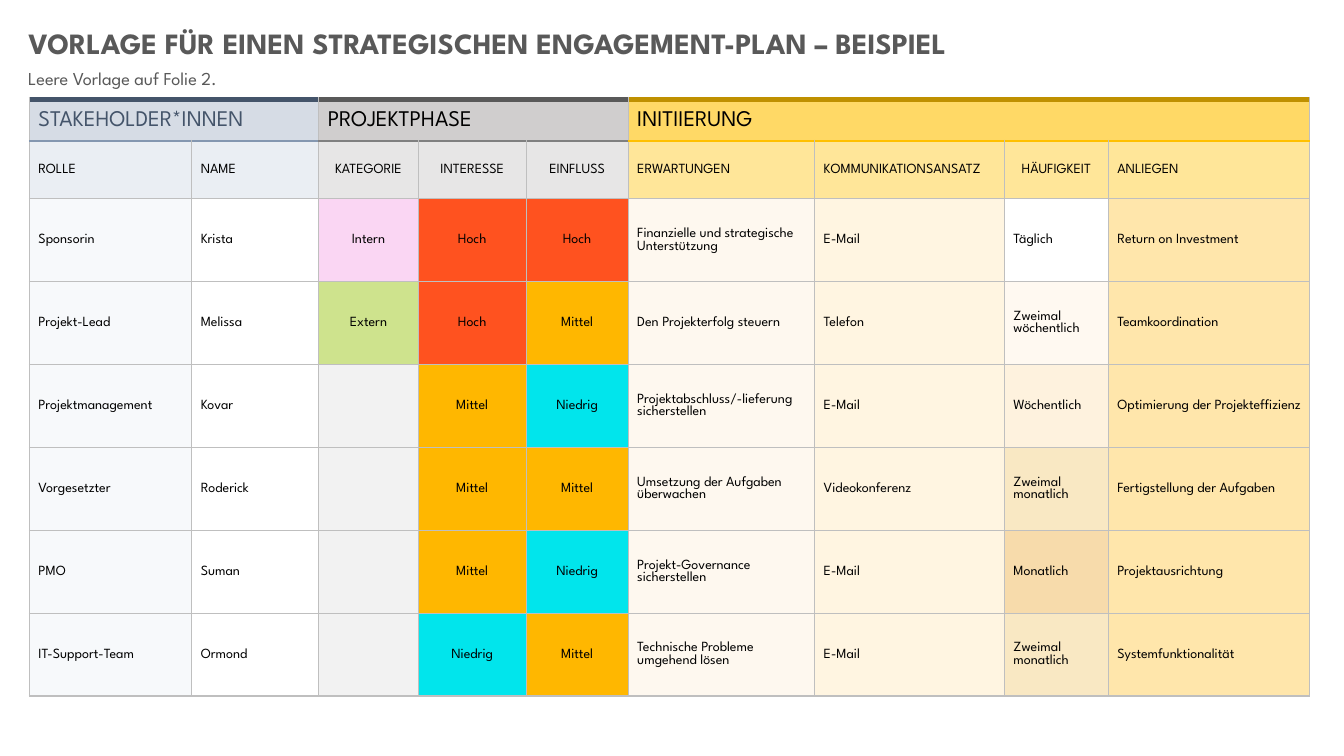
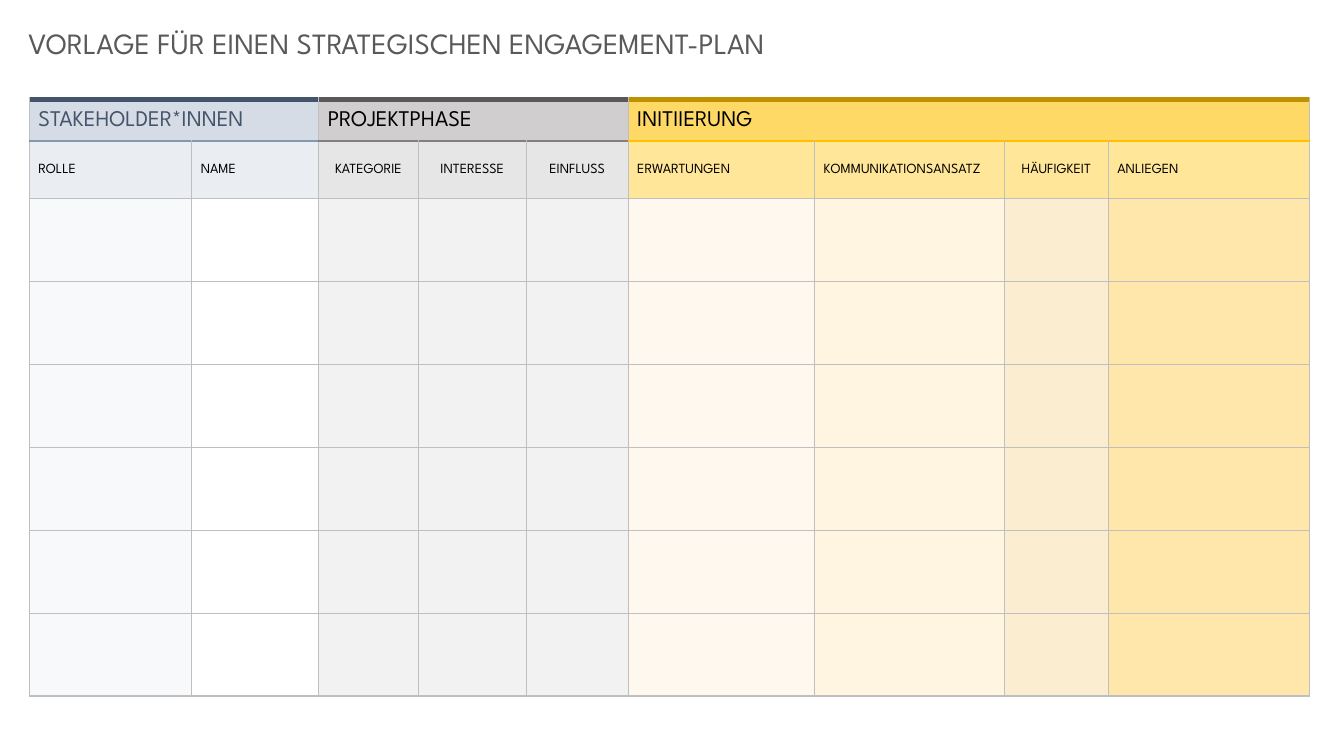
import lxml.etree
import pptx
import pptx.dml.color
import pptx.enum.text
import pptx.oxml.ns
import pptx.util

FONT = "League Spartan"
GREY_TEXT = "595959"
BLACK = "000000"
GRID = ("BFBFBF", 1)
LEFT = pptx.enum.text.PP_ALIGN.LEFT
CENTER = pptx.enum.text.PP_ALIGN.CENTER
TOP = pptx.enum.text.MSO_ANCHOR.TOP
MIDDLE = pptx.enum.text.MSO_ANCHOR.MIDDLE

PHASES = [
    dict(name="STAKEHOLDER*INNEN", span=2, text="44546A", fill="D6DCE5",
         top="44546A", bottom="8497B0", subfill="EAEEF3"),
    dict(name="PROJEKTPHASE", span=3, text=BLACK, fill="D0CECE",
         top="595959", bottom="808080", subfill="E7E6E6"),
    dict(name="INITIIERUNG", span=4, text=BLACK, fill="FFD966",
         top="BF9000", bottom="FFC000", subfill="FFE699"),
]

# name, width in cm, fill, heading alignment, body alignment
COLUMNS = [
    ("ROLLE", 4.09, "F7F9FB", LEFT, LEFT),
    ("NAME", 3.2, "FFFFFF", LEFT, LEFT),
    ("KATEGORIE", 2.51, "F2F2F2", CENTER, CENTER),
    ("INTERESSE", 2.72, "F2F2F2", CENTER, CENTER),
    ("EINFLUSS", 2.57, "F2F2F2", CENTER, CENTER),
    ("ERWARTUNGEN", 4.7, "FEF8EF", LEFT, LEFT),
    ("KOMMUNIKATIONSANSATZ", 4.78, "FFF5E1", LEFT, LEFT),
    ("HÄUFIGKEIT", 2.62, "FBEDCF", CENTER, LEFT),
    ("ANLIEGEN", 5.08, "FFE6AB", LEFT, LEFT),
]

VALUE_FILLS = {
    "Intern": "FAD6F3",
    "Extern": "CEE38D",
    "Hoch": "FF521F",
    "Mittel": "FFB700",
    "Niedrig": "01E5EC",
    "Täglich": "FFFFFF",
    "Zweimal wöchentlich": "FFF9F1",
    "Wöchentlich": "FEF2DE",
    "Zweimal monatlich": "F9E8C3",
    "Monatlich": "F7DBAB",
}

EXAMPLE = [
    ("Sponsorin", "Krista", "Intern", "Hoch", "Hoch",
     "Finanzielle und strategische Unterstützung", "E-Mail", "Täglich",
     "Return on Investment"),
    ("Projekt-Lead", "Melissa", "Extern", "Hoch", "Mittel",
     "Den Projekterfolg steuern", "Telefon", "Zweimal wöchentlich",
     "Teamkoordination"),
    ("Projektmanagement", "Kovar", "", "Mittel", "Niedrig",
     "Projektabschluss/-lieferung sicherstellen", "E-Mail", "Wöchentlich",
     "Optimierung der Projekteffizienz"),
    ("Vorgesetzter", "Roderick", "", "Mittel", "Mittel",
     "Umsetzung der Aufgaben überwachen", "Videokonferenz", "Zweimal monatlich",
     "Fertigstellung der Aufgaben"),
    ("PMO", "Suman", "", "Mittel", "Niedrig",
     "Projekt-Governance sicherstellen", "E-Mail", "Monatlich",
     "Projektausrichtung"),
    ("IT-Support-Team", "Ormond", "", "Niedrig", "Mittel",
     "Technische Probleme umgehend lösen", "E-Mail", "Zweimal monatlich",
     "Systemfunktionalität"),
]
BLANK = [("",) * len(COLUMNS)] * len(EXAMPLE)

SLIDES = [
    dict(title="VORLAGE FÜR EINEN STRATEGISCHEN ENGAGEMENT-PLAN – BEISPIEL",
         bold=True, note="Leere Vorlage auf Folie 2.", people=EXAMPLE),
    dict(title="VORLAGE FÜR EINEN STRATEGISCHEN ENGAGEMENT-PLAN",
         bold=False, note="", people=BLANK),
]

PHASE_HEIGHT, HEADING_HEIGHT, PERSON_HEIGHT = 1.04, 1.45, 2.09


def rgb(color):
    return pptx.dml.color.RGBColor.from_string(color)


def write(frame, text, size=10, color=BLACK, bold=False, align=LEFT, anchor=MIDDLE):
    frame.word_wrap = True
    frame.vertical_anchor = anchor
    paragraph = frame.paragraphs[0]
    paragraph.alignment = align
    run = paragraph.add_run()
    run.text = text
    run.font.name = FONT
    run.font.size = pptx.util.Pt(size)
    run.font.bold = bold
    run.font.color.rgb = rgb(color)


def set_borders(cell, top=GRID, bottom=GRID):
    properties = cell._tc.get_or_add_tcPr()
    edges = [("lnL", GRID), ("lnR", GRID), ("lnT", top), ("lnB", bottom)]
    for position, (tag, (color, width)) in enumerate(edges):
        line = lxml.etree.Element(pptx.oxml.ns.qn("a:" + tag),
                                  w=str(pptx.util.Pt(width)))
        fill = lxml.etree.SubElement(line, pptx.oxml.ns.qn("a:solidFill"))
        lxml.etree.SubElement(fill, pptx.oxml.ns.qn("a:srgbClr"), val=color)
        properties.insert(position, line)


def style_cell(cell, text, fill, align=LEFT, top=GRID, bottom=GRID, **text_format):
    cell.fill.solid()
    cell.fill.fore_color.rgb = rgb(fill)
    cell.margin_left = pptx.util.Cm(0.02 if align == CENTER else 0.23)
    cell.margin_right = cell.margin_top = pptx.util.Cm(0.02)
    cell.margin_bottom = 0
    cell.vertical_anchor = MIDDLE
    set_borders(cell, top, bottom)
    if text:
        write(cell.text_frame, text, align=align, **text_format)


def add_plan(slide, people):
    heights = [PHASE_HEIGHT, HEADING_HEIGHT] + [PERSON_HEIGHT] * len(people)
    widths = [column[1] for column in COLUMNS]
    plan = slide.shapes.add_table(
        len(heights), len(widths), pptx.util.Cm(0.74), pptx.util.Cm(2.51),
        pptx.util.Cm(sum(widths)), pptx.util.Cm(sum(heights))).table
    plan.first_row = plan.horz_banding = False
    for row, height in zip(plan.rows, heights):
        row.height = pptx.util.Cm(height)
    for column, width in zip(plan.columns, widths):
        column.width = pptx.util.Cm(width)

    start = 0
    for phase in PHASES:
        end = start + phase["span"]
        divider = (phase["bottom"], 2.25)
        for index in range(start, end):
            style_cell(plan.cell(0, index), phase["name"] if index == start else "",
                       phase["fill"], top=(phase["top"], 4.5), bottom=divider,
                       size=16, color=phase["text"])
            heading, _, _, align, _ = COLUMNS[index]
            style_cell(plan.cell(1, index), heading, phase["subfill"],
                       align=align, top=divider)
        plan.cell(0, start).merge(plan.cell(0, end - 1))
        start = end

    for row, person in enumerate(people, 2):
        for index, (value, column) in enumerate(zip(person, COLUMNS)):
            style_cell(plan.cell(row, index), value,
                       VALUE_FILLS.get(value, column[2]), align=column[4])


def add_slide(deck, title, bold, note, people):
    slide = deck.slides.add_slide(deck.slide_layouts[5])
    heading = slide.shapes.title
    heading.left, heading.top = pptx.util.Cm(0.46), pptx.util.Cm(0.51)
    heading.width, heading.height = pptx.util.Cm(30.58), pptx.util.Cm(1.14)
    write(heading.text_frame, title, size=21, color=GREY_TEXT, bold=bold, anchor=TOP)
    add_plan(slide, people)
    if note:
        hint = slide.shapes.add_textbox(pptx.util.Cm(0.46), pptx.util.Cm(1.57),
                                        pptx.util.Cm(11.76), pptx.util.Cm(0.81))
        write(hint.text_frame, note, size=13, color=GREY_TEXT, anchor=TOP)


def main():
    deck = pptx.Presentation()
    deck.slide_width = pptx.util.Cm(33.87)
    deck.slide_height = pptx.util.Cm(19.05)
    for content in SLIDES:
        add_slide(deck, **content)
    deck.save("out.pptx")


if __name__ == "__main__":
    main()
